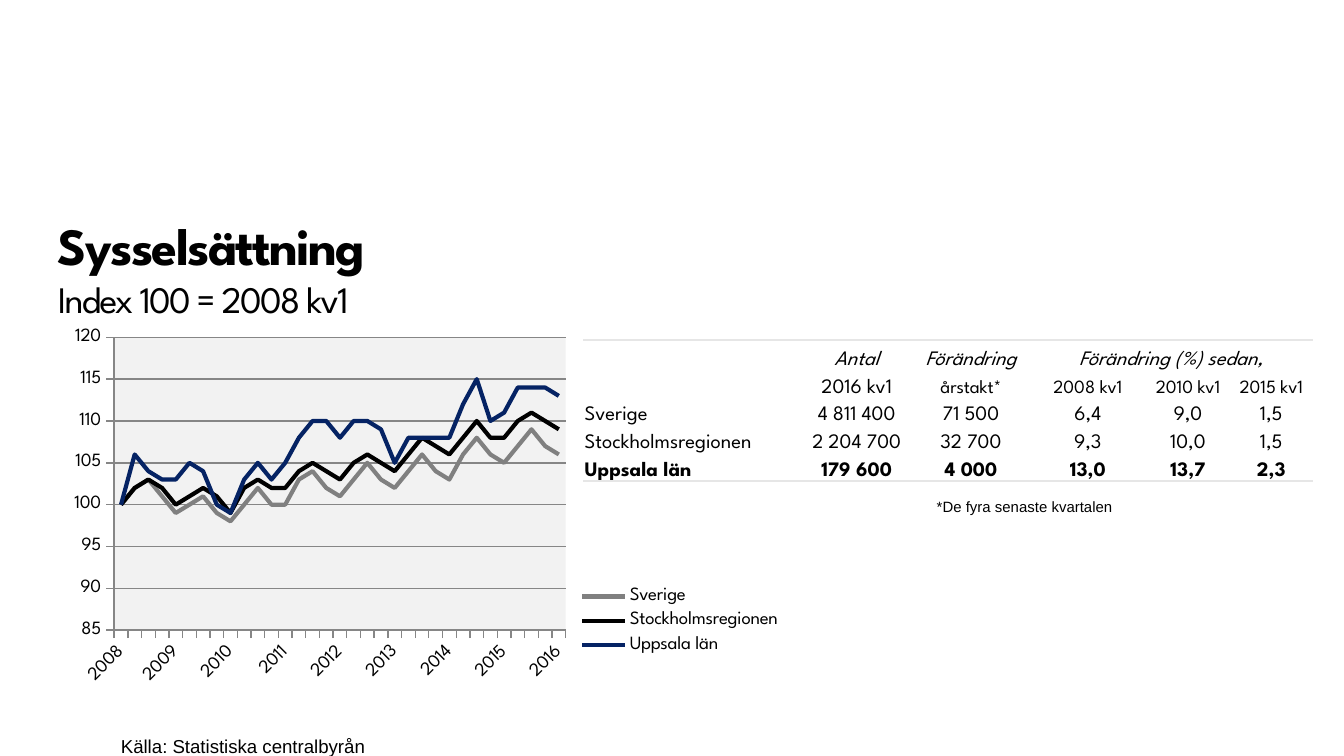
from lxml.etree import SubElement
from pptx import Presentation
from pptx.chart.data import CategoryChartData as Data
from pptx.dml.color import RGBColor
from pptx.enum.chart import XL_CHART_TYPE as Kind, XL_LEGEND_POSITION as Side, XL_TICK_MARK as Tick
from pptx.enum.text import MSO_ANCHOR as Anchor, PP_ALIGN as Align
from pptx.oxml import parse_xml
from pptx.oxml.ns import nsdecls, qn
from pptx.util import Inches, Pt

WIDE = 10
HIGH = WIDE * 9 / 16
FACE = "League Spartan"
HEADS = [("Sysselsättning", 28, True), ("Index 100 = 2008 kv1", 20, False)]
YEARS = range(2008, 2017)
LINES = [
    ("Sverige", "808080",
     [100, 102, 103, 101, 99, 100, 101, 99, 98, 100, 102, 100, 100, 103, 104, 102, 101,
      103, 105, 103, 102, 104, 106, 104, 103, 106, 108, 106, 105, 107, 109, 107, 106]),
    ("Stockholmsregionen", "000000",
     [100, 102, 103, 102, 100, 101, 102, 101, 99, 102, 103, 102, 102, 104, 105, 104, 103,
      105, 106, 105, 104, 106, 108, 107, 106, 108, 110, 108, 108, 110, 111, 110, 109]),
    ("Uppsala län", "052364",
     [100, 106, 104, 103, 103, 105, 104, 100, 99, 103, 105, 103, 105, 108, 110, 110, 108,
      110, 110, 109, 105, 108, 108, 108, 108, 112, 115, 110, 111, 114, 114, 114, 113]),
]
GRAPH = (0.43, 2.39, 5.51, 2.76)
ROWS = [
    ["", "Antal", "Förändring", "Förändring (%) sedan,", "", ""],
    ["", "2016 kv1", "årstakt*", "2008 kv1", "2010 kv1", "2015 kv1"],
    ["Sverige", "4 811 400", "71 500", "6,4", "9,0", "1,5"],
    ["Stockholmsregionen", "2 204 700", "32 700", "9,3", "10,0", "1,5"],
    ["Uppsala län", "179 600", "4 000", "13,0", "13,7", "2,3"],
]
COLS = [1.62, 0.83, 0.87, 0.87, 0.62, 0.62]
TALLS = [0.22, 0.21, 0.2, 0.21, 0.21]
PLAIN = "{2D5ABB26-0587-4C30-8999-92F81FD0307C}"
NOTES = [
    ("Källa: Statistiska centralbyrån", 10, (0.9, 5.3, 2, 0.42)),
    ("*De fyra senaste kvartalen", 8, (6.97, 3.5, 1.5, 1)),
]


def tint(code):
    return RGBColor.from_string(code)


def place(*box):
    return [Inches(n) for n in box]


def style(font, size, bold=False, face=FACE, slant=False):
    font.name, font.size, font.bold, font.italic = face, Pt(size), bold, slant
    font.color.rgb = tint("000000")


def clear(frame):
    frame.margin_left = frame.margin_right = frame.margin_top = frame.margin_bottom = 0


def set_layout(part, spot, box, inner=False):
    for old in part.findall(qn("c:layout")):
        part.remove(old)
    target = '<c:layoutTarget val="inner"/>' if inner else ""
    shares = [n / full for n, full in zip(box, GRAPH[2:] * 2)]
    sizes = "".join(f'<c:{k} val="{v:.4f}"/>' for k, v in zip("xywh", shares))
    part.insert(spot, parse_xml(
        f'<c:layout {nsdecls("c")}><c:manualLayout>{target}<c:xMode val="edge"/>'
        f'<c:yMode val="edge"/>{sizes}</c:manualLayout></c:layout>'))


def add_title(slide):
    title = slide.shapes.title
    title.left, title.top, title.width, title.height = place(0.43, 1.59, 6.21, 0.8)
    frame = title.text_frame
    clear(frame)
    frame.vertical_anchor = Anchor.BOTTOM
    frame.text = "\v".join(head[0] for head in HEADS)
    par = frame.paragraphs[0]
    par.alignment = Align.LEFT
    for run, (_, size, bold) in zip(par.runs, HEADS):
        style(run.font, size, bold)
        run.font._element.set("spc", "-90")


def add_graph(slide):
    data = Data(number_format="#,##0")
    data.categories = [str(y) if q == 0 else "" for y in YEARS for q in range(4)][:len(LINES[0][2])]
    for name, _, vals in LINES:
        data.add_series(name, vals)
    chart = slide.shapes.add_chart(Kind.LINE, *place(*GRAPH), data).chart
    chart.has_title = False
    style(chart.font, 10)
    plot = chart.plots[0]
    plot.vary_by_categories = False
    for line, (_, code, _) in zip(plot.series, LINES):
        line.smooth = False
        line.format.line.width = Pt(2.25)
        line.format.line.color.rgb = tint(code)
    vert, flat = chart.value_axis, chart.category_axis
    vert.minimum_scale, vert.maximum_scale, vert.major_unit = 85, 120, 5
    vert.has_major_gridlines = True
    for axis in (vert, flat):
        axis.major_tick_mark = Tick.OUTSIDE
    for part in (vert, flat, vert.major_gridlines):
        part.format.line.color.rgb = tint("868686")
        part.format.line.width = Pt(0.75)
    flat.tick_labels.font.size = Pt(10)
    flat._element.find(qn("c:txPr")).find(qn("a:bodyPr")).set("rot", "-2700000")
    chart.has_legend = True
    key = chart.legend
    key.position, key.include_in_layout = Side.RIGHT, False
    set_layout(key._element, 1, (3.83, 1.93, 1.6, 0.6))
    area = plot._element.getparent()
    set_layout(area, 0, (0.42, 0.12, 3.36, 2.18), True)
    area.append(parse_xml(f'<c:spPr {nsdecls("c", "a")}><a:solidFill><a:srgbClr val="F2F2F2"/>'
                          '</a:solidFill></c:spPr>'))


def add_grid(slide):
    box = place(4.34, 2.53, sum(COLS), sum(TALLS))
    grid = slide.shapes.add_table(len(ROWS), len(COLS), *box).table
    grid.first_row = grid.horz_banding = False
    grid._tbl.tblPr.find(qn("a:tableStyleId")).text = PLAIN
    for col, wide in zip(grid.columns, COLS):
        col.width = Inches(wide)
    last = len(ROWS) - 1
    for r, words in enumerate(ROWS):
        grid.rows[r].height = Inches(TALLS[r])
        for c, word in enumerate(words):
            cell = grid.cell(r, c)
            cell.text = word
            cell.vertical_anchor = Anchor.BOTTOM
            cell.margin_left = cell.margin_right = cell.margin_top = Inches(0.01)
            cell.margin_bottom = 0
            cell.fill.background()
            par = cell.text_frame.paragraphs[0]
            par.alignment = Align.CENTER if c else Align.LEFT
            size = 10 if r == 1 and c > 1 else 11
            for run in par.runs:
                style(run.font, size, r == last, slant=r == 0)
            if not word:
                SubElement(par._p, qn("a:endParaRPr"), sz="1100")
            if r in (0, last):
                edge = "lnB" if r else "lnT"
                cell._tc.tcPr.insert(0, parse_xml(
                    f'<a:{edge} {nsdecls("a")} w="12700"><a:solidFill><a:srgbClr val="E6E6E6"/>'
                    f'</a:solidFill></a:{edge}>'))
    grid.cell(0, 3).merge(grid.cell(0, 5))


def add_note(slide, text, size, box):
    frame = slide.shapes.add_textbox(*place(*box)).text_frame
    clear(frame)
    frame.word_wrap = False
    frame.text = text
    par = frame.paragraphs[0]
    par.line_spacing = Pt(24)
    style(par.runs[0].font, size, face="Arial")


def main():
    deck = Presentation()
    deck.slide_width, deck.slide_height = place(WIDE, HIGH)
    slide = deck.slides.add_slide(deck.slide_layouts[5])
    add_title(slide)
    add_grid(slide)
    for note in NOTES:
        add_note(slide, *note)
    add_graph(slide)
    deck.save("out.pptx")


if __name__ == "__main__":
    main()
